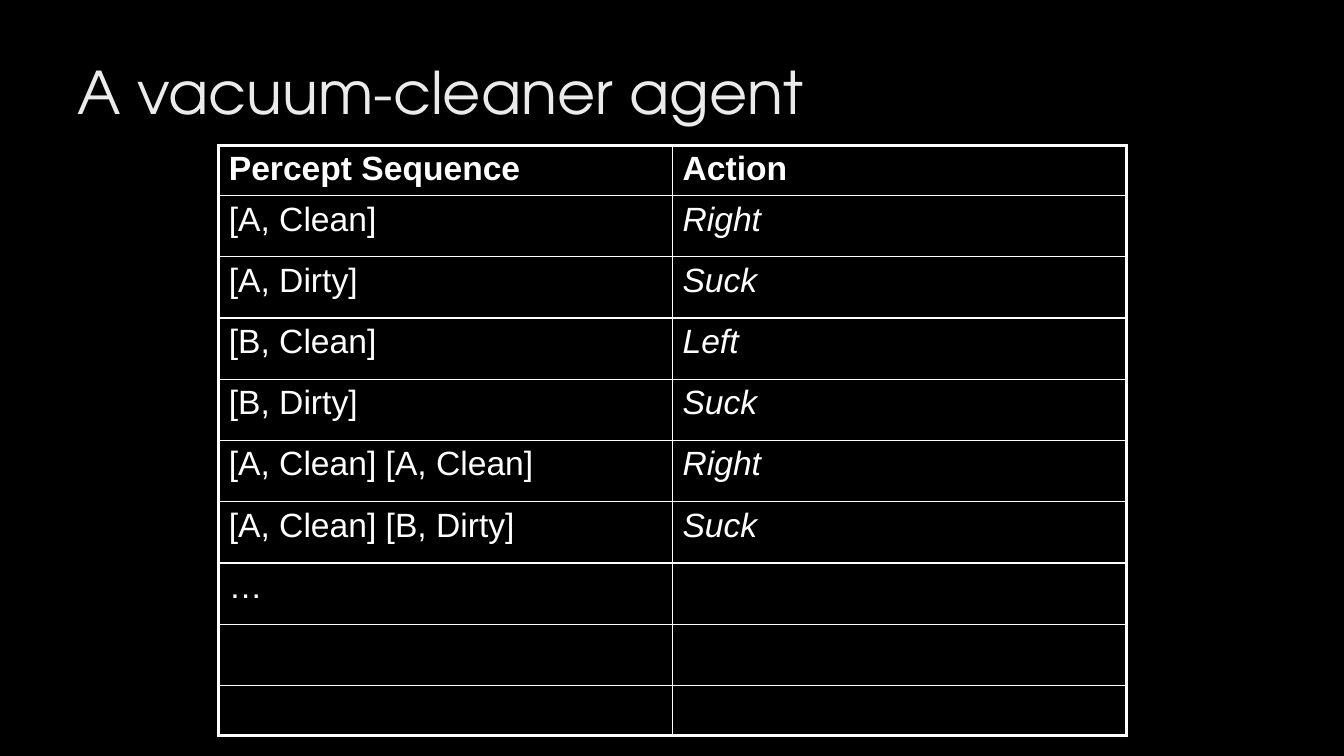
from lxml import etree
from pptx import Presentation
from pptx.dml.color import RGBColor
from pptx.enum.text import MSO_ANCHOR, PP_ALIGN
from pptx.oxml.ns import qn
from pptx.util import Inches, Pt

BLACK = RGBColor(0x00, 0x00, 0x00)
WHITE = RGBColor(0xFF, 0xFF, 0xFF)
TITLE_GREY = RGBColor(0xEB, 0xEB, 0xEB)

THIN, THICK = Pt(1), Pt(2.25)

ROWS = [
    ("Percept Sequence", "Action"),
    ("[A, Clean]", "Right"),
    ("[A, Dirty]", "Suck"),
    ("[B, Clean]", "Left"),
    ("[B, Dirty]", "Suck"),
    ("[A, Clean] [A, Clean]", "Right"),
    ("[A, Clean] [B, Dirty]", "Suck"),
    ("…", ""),
    ("", ""),
    ("", ""),
]


def set_font(font, values):
    for name, value in values.items():
        if name == "color":
            font.color.rgb = value
        else:
            setattr(font, name, value)


def set_borders(cell, widths):
    tcPr = cell._tc.get_or_add_tcPr()
    for i, (side, width) in enumerate(widths.items()):
        ln = etree.Element(qn(f"a:ln{side}"), w=str(int(width)))
        fill = etree.SubElement(ln, qn("a:solidFill"))
        etree.SubElement(fill, qn("a:srgbClr"), val=str(WHITE))
        tcPr.insert(i, ln)


prs = Presentation()
prs.slide_width, prs.slide_height = Inches(13.33), Inches(7.5)
s = prs.slides.add_slide(prs.slide_layouts[5])
s.background.fill.solid()
s.background.fill.fore_color.rgb = BLACK

# Title
title = s.shapes.title
title.left, title.top = Inches(0.67), Inches(0.5)
title.width, title.height = Inches(12), Inches(1.5)
tf = title.text_frame
tf.vertical_anchor = MSO_ANCHOR.TOP
p = tf.paragraphs[0]
p.alignment = PP_ALIGN.LEFT
r = p.add_run()
r.text = "A vacuum-cleaner agent"
set_font(r.font, {"name": "TeX Gyre Adventor", "size": Pt(42), "color": TITLE_GREY})

# Percept table: the first and last rows are shorter, the rest share the height
height, end_height = 5.86, 0.5
last = len(ROWS) - 1
mid_height = (height - 2 * end_height) / (len(ROWS) - 2)
table = s.shapes.add_table(len(ROWS), 2, Inches(2.17), Inches(1.44),
                           Inches(9), Inches(height)).table
table.first_row = table.horz_banding = False

for i, row in enumerate(ROWS):
    table.rows[i].height = Inches(end_height if i in (0, last) else mid_height)
    for j, text in enumerate(row):
        cell = table.cell(i, j)
        cell.fill.background()
        set_borders(cell, {
            "L": THICK if j == 0 else THIN,
            "R": THICK if j == 1 else THIN,
            "T": THICK if i == 0 else THIN,
            "B": THICK if i == last else THIN,
        })
        if text:
            r = cell.text_frame.paragraphs[0].add_run()
            r.text = text
            set_font(r.font, {"name": "Arial", "size": Pt(24), "color": WHITE,
                              "bold": i == 0, "italic": i > 0 and j == 1})

prs.save("out.pptx")
